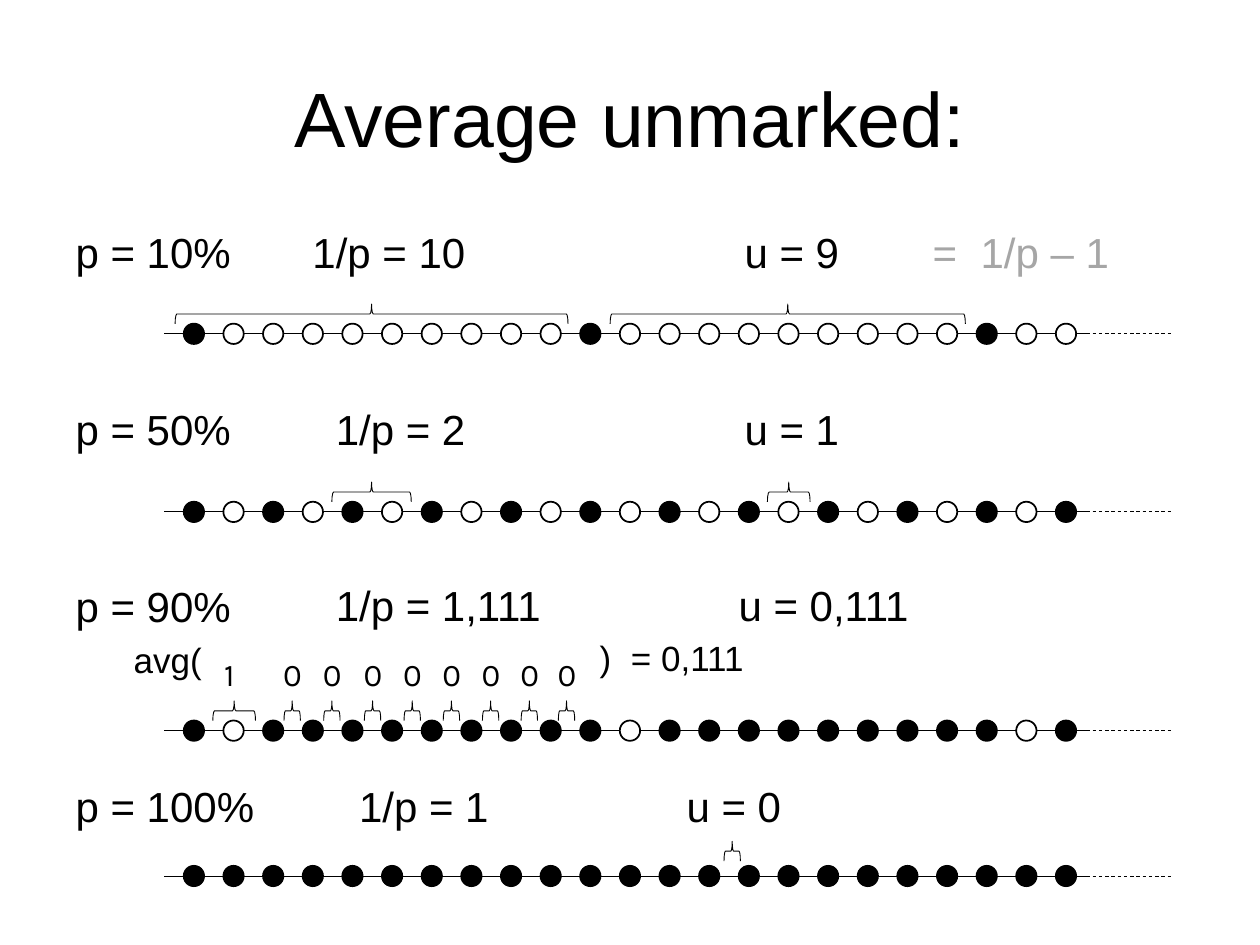
import pptx
import pptx.dml.color
import pptx.enum.dml
import pptx.enum.shapes
import pptx.enum.text
import pptx.oxml
import pptx.oxml.ns
import pptx.util
from lxml import etree
from pptx.util import Cm

COLOURS = {"ink": "000000", "paper": "FFFFFF", "faded": "A6A6A6"}
SHAPES = pptx.enum.shapes.MSO_SHAPE
DOT_COUNT = 23
DOT_SIZE = 0.41
DOT_PITCH = 17.58 / (DOT_COUNT - 1)
FIRST_DOT = 3.91
LINE_START, LINE_END, DASH_END = 3.31, 21.9, 23.65
BRACE_DEPTH = 0.4
SMALL_BRACE = 0.33
ZERO_CENTRES = [5.89, 6.69, 7.51, 8.31, 9.1, 9.89, 10.67, 11.42]
LABELS = [("1", 4.7)] + [("0", centre) for centre in ZERO_CENTRES]

HEADINGS = [
    ("p = 10%", 24, 0, 0),
    ("p = 50%", 24, 72.2, 0),
    ("p = 90%", 24, 72.2, 0),
    ("avg(", 20, 4.5, 1.17),
    ("p = 100%", 24, 57.5, 0),
]

FORMULAS = [
    (4.57, 24, "ink", [("1/p = 10", 6.3), ("u = 9", 15.01)]),
    (4.57, 24, "faded", [("=", 18.8), ("1/p – 1", 19.77)]),
    (8.14, 24, "ink", [("1/p = 2", 6.77), ("u = 1", 15.01)]),
    (11.69, 24, "ink", [("1/p = 1,111", 6.77), ("u = 0,111", 14.89)]),
    (12.84, 20, "ink", [(")", 12.09), ("= 0,111", 12.72)]),
    (15.74, 24, "ink", [("1/p = 1", 7.24), ("u = 0", 13.84)]),
]

TIMELINES = [
    (6.73, "●○○○○○○○○○", 0.4, [(7.49, 7.92), (15.88, 7.16)]),
    (10.32, "●○", 0.4, [(7.49, 1.6), (15.9, 0.86)]),
    (14.73, "●○●●●●●●●●", 0.4,
     [(4.72, 0.86)] + [(centre, SMALL_BRACE) for centre in ZERO_CENTRES]),
    (17.66, "●", 0.5, [(14.76, SMALL_BRACE)]),
]


def colour(name):
    return pptx.dml.color.RGBColor.from_string(COLOURS[name])


def format_font(span, size, name="Arial", ink="ink"):
    span.font.size = pptx.util.Pt(size)
    span.font.name = name
    span.font.color.rgb = colour(ink)


def place(box, left, top, width, height):
    box.left, box.top, box.width, box.height = Cm(left), Cm(top), Cm(width), Cm(height)


def write_title(page):
    title = page.shapes.title
    place(title, 1.27, 0.76, 22.86, 3.18)
    title.text_frame.text = "Average unmarked:"
    para = title.text_frame.paragraphs[0]
    para.alignment = pptx.enum.text.PP_ALIGN.CENTER
    format_font(para.runs[0], 44)


def write_headings(page):
    body = page.placeholders[1]
    place(body, 1.27, 4.44, 22.86, 12.57)
    frame = body.text_frame
    frame.auto_size = pptx.enum.text.MSO_AUTO_SIZE.NONE
    for index, (text, size, gap, margin) in enumerate(HEADINGS):
        para = frame.add_paragraph() if index else frame.paragraphs[0]
        para.text = text
        para.space_before = pptx.util.Pt(gap)
        format_font(para.runs[0], size)
        properties = para._p.get_or_add_pPr()
        properties.set("marL", str(Cm(margin)))
        properties.set("indent", "0")
        etree.SubElement(properties, pptx.oxml.ns.qn("a:buNone"))


def add_text(page, text, left, top, width, height):
    box = page.shapes.add_textbox(Cm(left), Cm(top), Cm(width), Cm(height))
    box.text_frame.word_wrap = False
    box.text_frame.text = text
    return box.text_frame, box.text_frame.paragraphs[0].runs[0]


def add_formula(page, text, left, top, size, ink):
    frame, span = add_text(page, text, left, top, 5, 1)
    frame.word_wrap = True
    frame.margin_left = frame.margin_right = frame.margin_top = frame.margin_bottom = 0
    format_font(span, size, ink=ink)


def add_label(page, text, centre):
    frame, span = add_text(page, text, centre - 0.43, 13.08, 0.86, 1.02)
    frame.auto_size = pptx.enum.text.MSO_AUTO_SIZE.SHAPE_TO_FIT_TEXT
    format_font(span, 18, "Karla")


def add_line(page, start, end, height, dashed=False):
    line = page.shapes.add_connector(
        pptx.enum.shapes.MSO_CONNECTOR.STRAIGHT, Cm(start), Cm(height), Cm(end), Cm(height))
    line.line.color.rgb = colour("ink")
    line.line.width = pptx.util.Pt(0.5)
    if dashed:
        line.line.dash_style = pptx.enum.dml.MSO_LINE.DASH
    etree.SubElement(line._element.spPr, pptx.oxml.ns.qn("a:effectLst"))


def add_outlined(page, kind, centre, middle, width, height, weight):
    shape = page.shapes.add_shape(
        kind, Cm(centre - width / 2), Cm(middle - height / 2), Cm(width), Cm(height))
    shape.shadow.inherit = False
    shape.line.color.rgb = colour("ink")
    shape.line.width = pptx.util.Pt(weight)
    return shape


def add_dot(page, centre, middle, marked):
    dot = add_outlined(page, SHAPES.OVAL, centre, middle, DOT_SIZE, DOT_SIZE, 1)
    dot.fill.solid()
    dot.fill.fore_color.rgb = colour("ink" if marked else "paper")


def add_brace(page, centre, middle, span):
    brace = add_outlined(page, SHAPES.LEFT_BRACE, centre, middle, BRACE_DEPTH, span, 0.5)
    brace.fill.background()
    brace.rotation = 90


def add_timeline(page, height, pattern, rise, braces):
    add_line(page, LINE_START, LINE_END, height)
    for index in range(DOT_COUNT):
        marked = pattern[index % len(pattern)] == "●"
        add_dot(page, FIRST_DOT + index * DOT_PITCH, height, marked)
    add_line(page, LINE_END, DASH_END, height, dashed=True)
    for centre, span in braces:
        add_brace(page, centre, height - rise, span)


def main():
    deck = pptx.Presentation()
    deck.slide_width, deck.slide_height = Cm(25.4), Cm(19.05)
    page = deck.slides.add_slide(deck.slide_layouts[1])
    write_title(page)
    write_headings(page)
    for top, size, ink, cells in FORMULAS:
        for text, left in cells:
            add_formula(page, text, left, top, size, ink)
    for timeline in TIMELINES:
        add_timeline(page, *timeline)
    for text, centre in LABELS:
        add_label(page, text, centre)
    deck.save("out.pptx")


if __name__ == "__main__":
    main()
